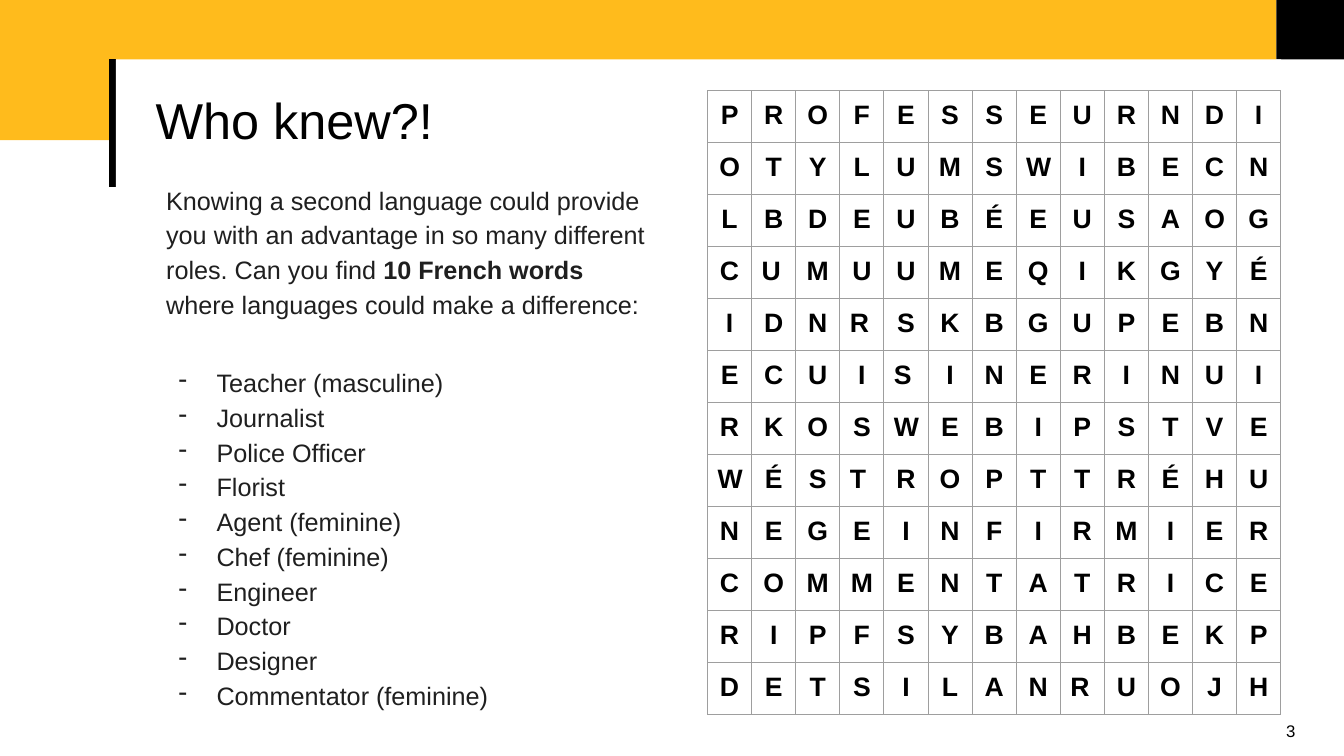
from lxml import etree
from pptx import Presentation
from pptx import util as u
from pptx.dml import color
from pptx.enum import shapes, text
from pptx.oxml import ns

Pt = u.Pt
YELLOW, BLACK, WHITE, INK, GRID = "FFBB1C", "000000", "FFFFFF", "1F1F1F", "9E9E9E"
INTRO = [
    ("Knowing a second language could provide you with an advantage in so many different roles. Can you find ", False),
    ("10 French words", True),
    (" where languages could make a difference:", False),
]
ROLES = [
    "Teacher (masculine)", "Journalist", "Police Officer", "Florist", "Agent (feminine)",
    "Chef (feminine)", "Engineer", "Doctor", "Designer", "Commentator (feminine)",
]
LETTERS = [
    "PROFESSEURNDI",
    "OTYLUMSWIBECN",
    "LBDEUBÉEUSAOG",
    "CUMUUMEQIKGYÉ",
    "IDNRSKBGUPEBN",
    "ECUISINERINUI",
    "RKOSWEBIPSTVE",
    "WÉSTROPTTRÉHU",
    "NEGEINFIRMIER",
    "COMMENTATRICE",
    "RIPFSYBAHBEKP",
    "DETSILANRUOJH",
]
LEFT_ALIGNED = {(3, 1), (4, 3), (5, 4), (7, 3), (11, 8)}


def rgb(value):
    return color.RGBColor.from_string(value)


def apply(target, values):
    for name, value in values.items():
        setattr(target, name, value)


def add_element(parent, tag, **attributes):
    return etree.SubElement(parent, ns.qn(tag), attributes)


def add_span(para, words, size, ink, bold=False):
    span = para.add_run()
    span.text = words
    apply(span.font, {"name": "Arial", "size": Pt(size), "bold": bold})
    span.font.color.rgb = rgb(ink)


def set_frame(frame, left, top, right, bottom, anchor=text.MSO_ANCHOR.TOP):
    apply(frame, {
        "word_wrap": True, "auto_size": text.MSO_AUTO_SIZE.NONE, "vertical_anchor": anchor,
        "margin_left": Pt(left), "margin_top": Pt(top),
        "margin_right": Pt(right), "margin_bottom": Pt(bottom),
    })


def add_block(page, left, top, width, height, fill):
    block = page.shapes.add_shape(
        shapes.MSO_SHAPE.RECTANGLE, Pt(left), Pt(top), Pt(width), Pt(height))
    block.shadow.inherit = False
    block.fill.solid()
    block.fill.fore_color.rgb = rgb(fill)
    block.line.fill.background()


def add_header(page, left, top, width, height):
    corner, band = 48.2, 42.5
    add_block(page, left, top, width - corner, height, YELLOW)
    add_block(page, left + width - corner, top, corner, band, BLACK)
    rule_x = left + 80.7
    rule = page.shapes.add_connector(
        shapes.MSO_CONNECTOR.STRAIGHT, Pt(rule_x), Pt(top + band), Pt(rule_x), Pt(top + 133.7))
    rule.line.width = Pt(5)
    rule.line.color.rgb = rgb(BLACK)
    add_element(rule.element.spPr, "a:effectLst")


def add_title(page, left, top, width, height):
    title = page.shapes.title
    apply(title, {"left": Pt(left), "top": Pt(top), "width": Pt(width), "height": Pt(height)})
    title.fill.solid()
    title.fill.fore_color.rgb = rgb(WHITE)
    set_frame(title.text_frame, 28.4, 3.6, 7.2, 3.6, text.MSO_ANCHOR.MIDDLE)
    para = title.text_frame.paragraphs[0]
    apply(para, {"alignment": text.PP_ALIGN.LEFT, "line_spacing": 0.9})
    add_span(para, "Who knew?!", 36, BLACK)
    title.element.getparent().append(title.element)


def add_page_number(page, left, top, width, height):
    box = page.shapes.add_textbox(Pt(left), Pt(top), Pt(width), Pt(height))
    set_frame(box.text_frame, 7.2, 3.6, 7.2, 3.6)
    add_span(box.text_frame.paragraphs[0], "3", 12, BLACK)


def add_roles(page, left, top, width, height):
    box = page.shapes.add_textbox(Pt(left), Pt(top), Pt(width), Pt(height))
    frame = box.text_frame
    set_frame(frame, 7.2, 7.2, 7.2, 7.2)
    intro = frame.paragraphs[0]
    intro.line_spacing = 1.15
    for words, bold in INTRO:
        add_span(intro, words, 18, INK, bold)
    for index, role in enumerate(ROLES):
        para = frame.add_paragraph()
        apply(para, {"line_spacing": 1.15, "space_before": Pt(0 if index else 31)})
        properties = para._p.get_or_add_pPr()
        properties.set("marL", str(Pt(36)))
        properties.set("indent", str(Pt(-27)))
        add_element(add_element(properties, "a:buClr"), "a:srgbClr", val=INK)
        add_element(properties, "a:buChar", char="-")
        add_span(para, role, 18, INK)


def add_borders(cell):
    properties = cell._tc.get_or_add_tcPr()
    for side in ("a:lnL", "a:lnR", "a:lnT", "a:lnB"):
        border = add_element(properties, side, w=str(Pt(0.75)))
        add_element(add_element(border, "a:solidFill"), "a:srgbClr", val=GRID)


def add_word_search(page, left, top, width, height):
    rows, columns = len(LETTERS), len(LETTERS[0])
    table = page.shapes.add_table(
        rows, columns, Pt(left), Pt(top), Pt(width), Pt(height)).table
    apply(table, {"first_row": False, "horz_banding": False})
    for column in table.columns:
        column.width = Pt(width / columns)
    for row_index, letters in enumerate(LETTERS):
        table.rows[row_index].height = Pt(height / rows)
        for column_index, letter in enumerate(letters):
            cell = table.cell(row_index, column_index)
            apply(cell, {side: Pt(7.2) for side in (
                "margin_left", "margin_top", "margin_right", "margin_bottom")})
            add_borders(cell)
            cell.fill.background()
            para = cell.text_frame.paragraphs[0]
            centred = (row_index, column_index) not in LEFT_ALIGNED
            para.alignment = text.PP_ALIGN.CENTER if centred else text.PP_ALIGN.LEFT
            add_span(para, letter, 19, BLACK, True)


def main():
    deck = Presentation()
    apply(deck, {"slide_width": Pt(960), "slide_height": Pt(540)})
    page = deck.slides.add_slide(deck.slide_layouts.get_by_name("Title Only"))
    add_header(page, 0, 0, 960, 100.2)
    add_title(page, 82.8, 42.5, 832.4, 91)
    add_page_number(page, 911.5, 511.2, 29.5, 28.8)
    add_roles(page, 111.6, 121.7, 365.8, 399.6)
    add_word_search(page, 505.4, 64.8, 409.5, 445.8)
    deck.save("out.pptx")


if __name__ == "__main__":
    main()
